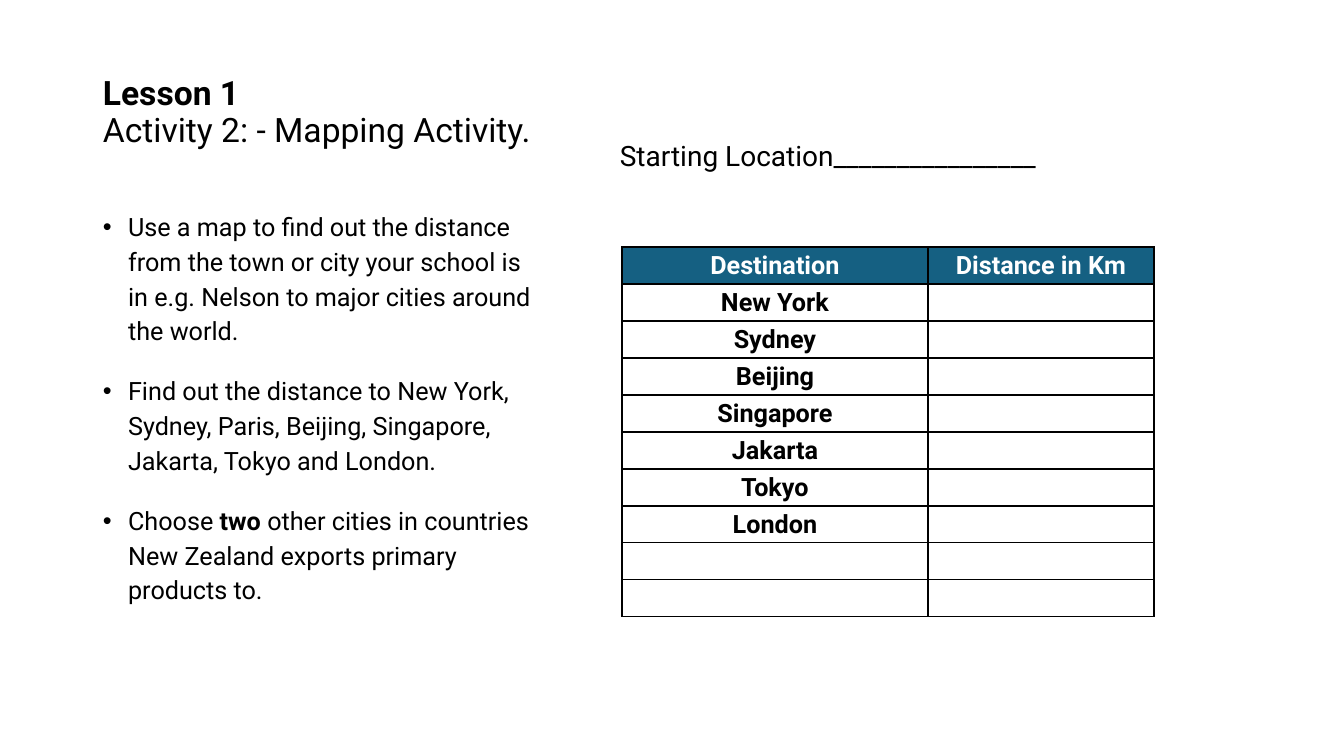
import pptx
import pptx.util
import pptx.dml.color
import pptx.enum.text
import pptx.oxml
from lxml import etree

# Content: each line is a list of (text, bold)
TITLE = [("Lesson 1", True), ("Activity 2: - Mapping Activity.", False)]
TASKS = [
    [("Use a map to find out the distance from the town or city your school "
      "is in e.g. Nelson to major cities around the world.", False)],
    [("Find out the distance to New York, Sydney, Paris, Beijing, Singapore, "
      "Jakarta, Tokyo and London.", False)],
    [("Choose ", False), ("two ", True),
     ("other cities in countries New Zealand exports primary products to.", False)],
]
START = "Starting Location" + "_" * 16
HEADS = ["Destination", "Distance in Km"]
CITIES = ["New York", "Sydney", "Beijing", "Singapore", "Jakarta", "Tokyo",
          "London", "", ""]
ROWS = [HEADS] + [[city, ""] for city in CITIES]

# Layout in px
WIDE, HIGH = 1344, 756
TITLE_BOX = (93, 40, 1159, 146)
TASK_BOX = (93, 202, 453, 480)
START_BOX = (610, 134, 544, 75)
GRID = (622, 247)
COLS = [306, 226]
ROW = 37
FONT, BLACK, WHITE, BLUE = "Roboto", "000000", "FFFFFF", "156082"
MID = pptx.enum.text.MSO_ANCHOR.MIDDLE
TOP = pptx.enum.text.MSO_ANCHOR.TOP


def px(n):
    return pptx.util.Emu(round(n * 914400 / 100.8))


def rgb(code):
    return pptx.dml.color.RGBColor.from_string(code)


def style(para, size, color=BLACK, bold=None):
    para.font.name = FONT
    para.font.size = pptx.util.Pt(size)
    para.font.color.rgb = rgb(color)
    para.font.bold = bold


def add_run(para, text, bold):
    run = para.add_run()
    run.text = text
    run.font.bold = bold


def add_box(slide, box, anchor):
    frame = slide.shapes.add_textbox(*map(px, box)).text_frame
    frame.word_wrap = True
    frame.vertical_anchor = anchor
    return frame


def add_bullet(para):
    props = para._p.get_or_add_pPr()
    props.set("marL", "228600")
    props.set("indent", "-228600")
    tag = pptx.oxml.ns.qn
    mark = etree.Element(tag("a:buChar"), char="•")
    font = etree.Element(tag("a:buFont"), typeface="Arial")
    fonts = props.find(tag("a:defRPr"))
    if fonts is None:
        props.extend([font, mark])
    else:
        fonts.addprevious(font)
        fonts.addprevious(mark)


def add_edges(cell):
    props = cell._tc.get_or_add_tcPr()
    for spot, side in enumerate(("lnL", "lnR", "lnT", "lnB")):
        line = pptx.oxml.parse_xml(
            f'<a:{side} {pptx.oxml.ns.nsdecls("a")} w="12700"><a:solidFill>'
            f'<a:srgbClr val="{BLACK}"/></a:solidFill></a:{side}>')
        props.insert(spot, line)


def add_grid(slide):
    table = slide.shapes.add_table(
        len(ROWS), len(COLS), *map(px, GRID), px(sum(COLS)),
        px(ROW * len(ROWS))).table
    table.first_row = table.horz_banding = False
    for col, width in zip(table.columns, COLS):
        col.width = px(width)
    for r, row in enumerate(ROWS):
        table.rows[r].height = px(ROW)
        for c, text in enumerate(row):
            cell = table.cell(r, c)
            cell.text = text
            cell.margin_left = cell.margin_right = px(7)
            cell.margin_top = cell.margin_bottom = 0
            cell.fill.solid()
            cell.fill.fore_color.rgb = rgb(WHITE if r else BLUE)
            para = cell.text_frame.paragraphs[0]
            para.alignment = pptx.enum.text.PP_ALIGN.CENTER
            para.line_spacing = 1.15
            para.space_after = pptx.util.Pt(8)
            style(para, 18, BLACK if r else WHITE, True)
            add_edges(cell)


def main():
    deck = pptx.Presentation()
    deck.slide_width, deck.slide_height = px(WIDE), px(HIGH)
    slide = deck.slides.add_slide(deck.slide_layouts[6])

    # Title
    para = add_box(slide, TITLE_BOX, MID).paragraphs[0]
    para.line_spacing = 0.9
    style(para, 24)
    for i, (text, bold) in enumerate(TITLE):
        if i:
            para.add_line_break()
        add_run(para, text, bold)

    # Tasks
    frame = add_box(slide, TASK_BOX, TOP)
    for i, task in enumerate(TASKS):
        para = frame.add_paragraph() if i else frame.paragraphs[0]
        para.line_spacing = 1.15
        para.space_before = pptx.util.Pt(10)
        para.space_after = pptx.util.Pt(8)
        style(para, 18)
        add_bullet(para)
        for text, bold in task:
            add_run(para, text, bold)

    # Distance table and starting point
    add_grid(slide)
    para = add_box(slide, START_BOX, TOP).paragraphs[0]
    para.text = START
    style(para, 20)

    deck.save("out.pptx")


if __name__ == "__main__":
    main()
